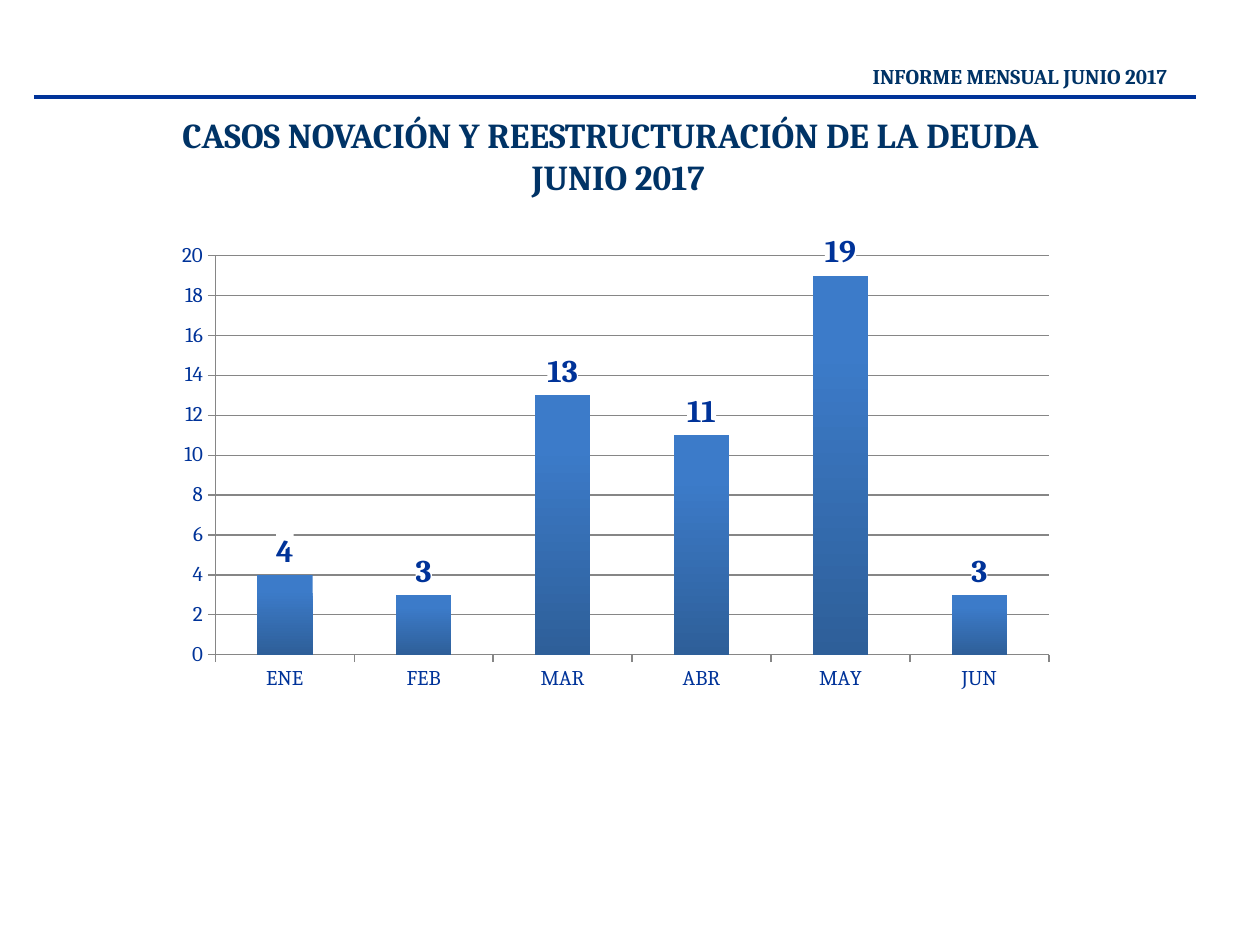
from dataclasses import dataclass

from lxml import etree
from pptx import Presentation
from pptx import util as u
from pptx.chart.data import CategoryChartData
from pptx.dml.color import RGBColor
from pptx.enum import chart as charts, shapes, text
from pptx.oxml import parse_xml
from pptx.oxml.ns import nsdecls, qn

EMU_PER_PX = 914400 // 126


def px(length):
    return u.Emu(length * EMU_PER_PX)


@dataclass(frozen=True)
class Theme:
    font: str = "Cambria"
    heading: RGBColor = RGBColor(0x00, 0x33, 0x66)
    accent: RGBColor = RGBColor(0x00, 0x33, 0x99)
    grid: RGBColor = RGBColor(0x86, 0x86, 0x86)
    bar_top: RGBColor = RGBColor(0x3C, 0x7B, 0xC9)
    bar_bottom: RGBColor = RGBColor(0x2E, 0x5F, 0x99)
    title_size: int = 20
    label_size: int = 18
    small_size: int = 12


def format_font(font, theme, size, color, bold=False):
    font.name = theme.font
    font.size = u.Pt(size)
    font.color.rgb = color
    font.bold = bold


def write_text(paragraph, content, **style):
    paragraph.alignment = text.PP_ALIGN.CENTER
    run = paragraph.add_run()
    run.text = content
    format_font(run.font, **style)


class SlideBuilder:
    def __init__(self, slide, theme):
        self.slide = slide
        self.theme = theme

    def text_box(self, lines, left, top, width, height, size, wrap=True):
        shape = self.slide.shapes.add_textbox(px(left), px(top), px(width), px(height))
        frame = shape.text_frame
        frame.word_wrap = wrap
        frame.auto_size = text.MSO_AUTO_SIZE.SHAPE_TO_FIT_TEXT
        for index, line in enumerate(lines):
            paragraph = frame.add_paragraph() if index else frame.paragraphs[0]
            write_text(paragraph, line, theme=self.theme, size=size,
                       color=self.theme.heading, bold=True)

    def rule(self, left, right, y):
        connector = self.slide.shapes.add_connector(
            shapes.MSO_CONNECTOR.STRAIGHT, px(left), px(y), px(right), px(y))
        connector.line.color.rgb = self.theme.accent
        connector.line.width = u.Pt(2.25)
        etree.SubElement(connector._element.spPr, qn("a:effectLst"))

    def column_chart(self, values, left, top, width, height):
        theme = self.theme
        data = CategoryChartData()
        data.categories = list(values)
        data.add_series("Series 1", list(values.values()))
        chart = self.slide.shapes.add_chart(
            charts.XL_CHART_TYPE.COLUMN_CLUSTERED,
            px(left), px(top), px(width), px(height), data).chart
        chart.has_legend = False
        chart.has_title = False
        format_font(chart.font, theme, theme.label_size, theme.accent)
        for axis in (chart.category_axis, chart.value_axis):
            axis.major_tick_mark = charts.XL_TICK_MARK.OUTSIDE
            axis.format.line.color.rgb = theme.grid
            format_font(axis.tick_labels.font, theme, theme.small_size, theme.accent)
        value_axis = chart.value_axis
        value_axis.minimum_scale = 0
        value_axis.maximum_scale = 20
        value_axis.major_unit = 2
        value_axis.has_major_gridlines = True
        value_axis.major_gridlines.format.line.color.rgb = theme.grid
        self.style_columns(chart.plots[0])

    def style_columns(self, plot):
        theme = self.theme
        plot.gap_width = 150
        plot.vary_by_categories = False
        fill = plot.series[0].format.fill
        fill.gradient()
        fill.gradient_angle = 270
        stops = ((0.2, theme.bar_top), (1, theme.bar_bottom))
        for stop, (position, color) in zip(fill.gradient_stops, stops):
            stop.position = position
            stop.color.rgb = color
        labels = plot.series[0].data_labels
        labels.show_value = True
        labels.position = charts.XL_LABEL_POSITION.OUTSIDE_END
        format_font(labels.font, theme, theme.label_size, theme.accent, bold=True)
        background = parse_xml(
            f'<c:spPr {nsdecls("c", "a")}><a:solidFill>'
            '<a:srgbClr val="FFFFFF"/></a:solidFill></c:spPr>')
        labels._element.find(qn("c:txPr")).addprevious(background)


def main():
    presentation = Presentation()
    presentation.slide_width = px(1260)
    presentation.slide_height = px(945)
    theme = Theme()
    slide = presentation.slides.add_slide(presentation.slide_layouts[6])
    builder = SlideBuilder(slide, theme)
    builder.text_box(
        ["CASOS NOVACIÓN Y REESTRUCTURACIÓN DE LA DEUDA ", " JUNIO 2017"],
        54, 107, 1121, 97, theme.title_size)
    builder.rule(34, 1196, 97)
    builder.text_box(["INFORME MENSUAL JUNIO 2017"], 853, 57, 334, 38,
                     theme.small_size, wrap=False)
    cases = {"ENE": 4, "FEB": 3, "MAR": 13, "ABR": 11, "MAY": 19, "JUN": 3}
    builder.column_chart(cases, 164, 234, 903, 466)
    presentation.save("out.pptx")


if __name__ == "__main__":
    main()
